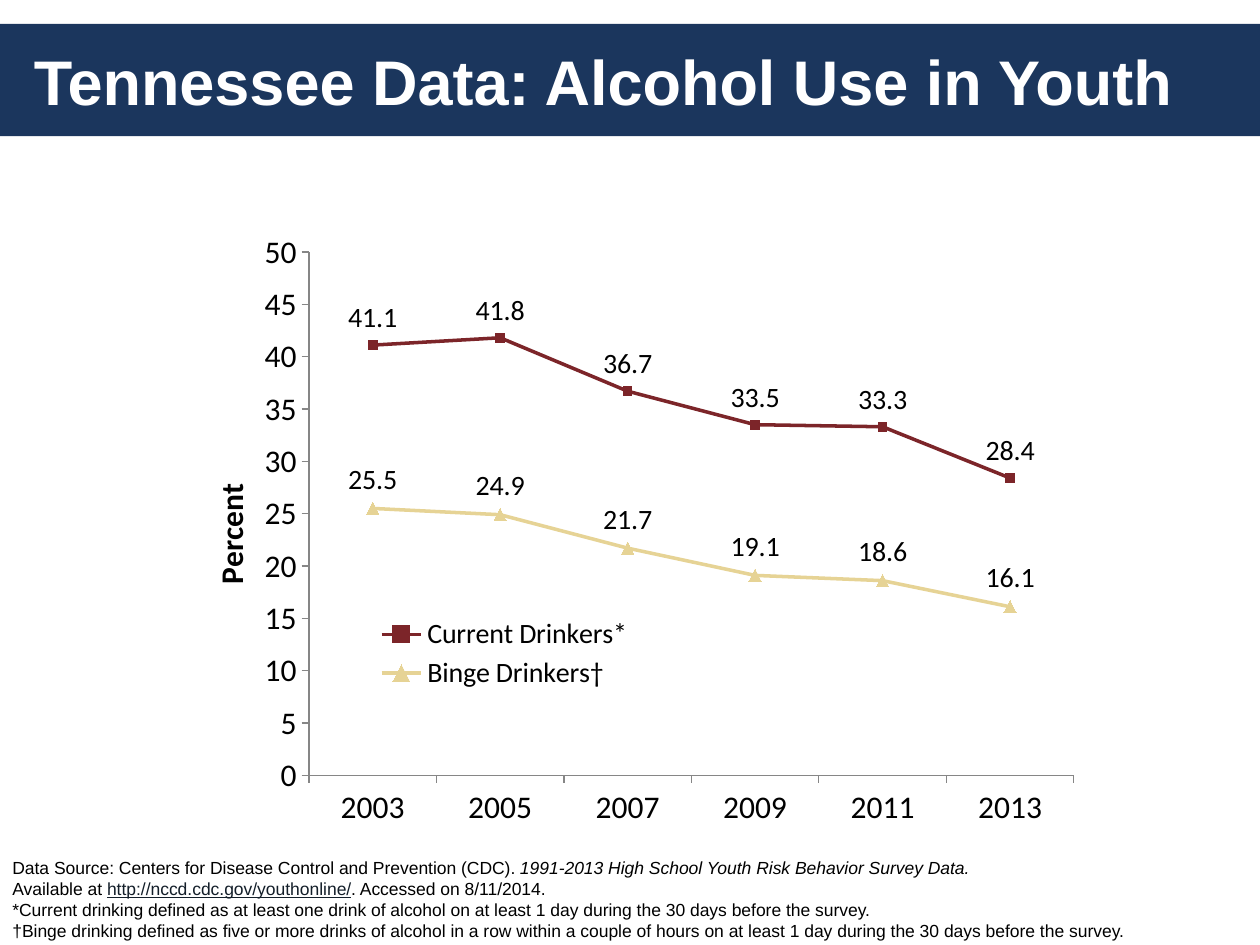
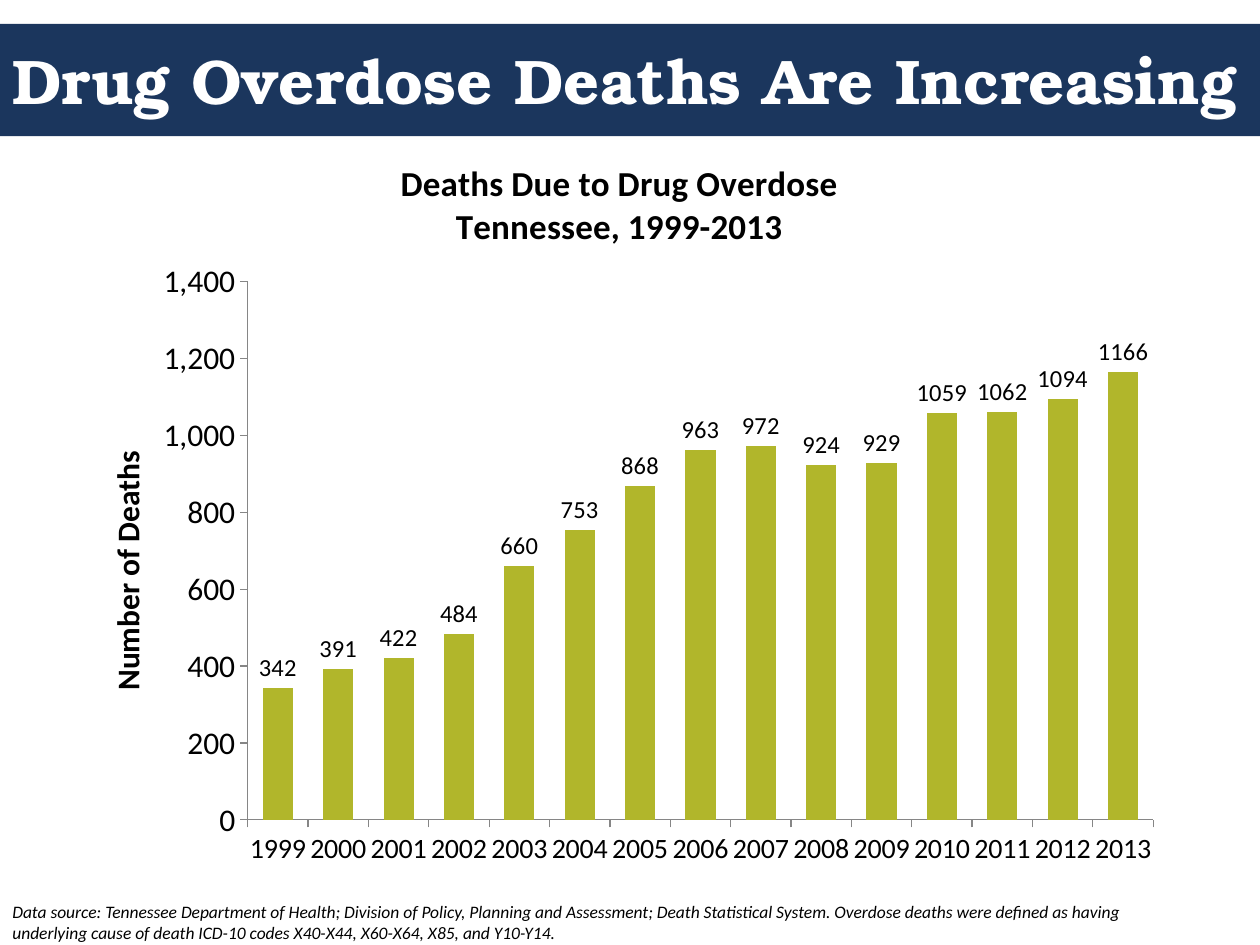
"""Build two slides on alcohol use and drug overdose deaths in Tennessee."""
from dataclasses import dataclass
from typing import Optional

from lxml import etree
from pptx import Presentation
from pptx import util as u
from pptx.chart import axis as ax
from pptx.chart import chart as ch
from pptx.chart import data as cd
from pptx.dml.color import RGBColor
from pptx.enum import chart as ce
from pptx.enum import shapes, text
from pptx.oxml.ns import qn
from pptx.slide import Slide
from pptx.text.text import Font


@dataclass(frozen=True)
class Theme:
    navy: RGBColor = RGBColor(0x1B, 0x36, 0x5D)
    white: RGBColor = RGBColor(0xFF, 0xFF, 0xFF)
    black: RGBColor = RGBColor(0, 0, 0)
    link: RGBColor = RGBColor(0x13, 0x1E, 0x29)
    axis: RGBColor = RGBColor(0x86, 0x86, 0x86)
    maroon: RGBColor = RGBColor(0x7C, 0x25, 0x29)
    sand: RGBColor = RGBColor(0xE6, 0xD3, 0x95)
    olive: RGBColor = RGBColor(0xB1, 0xB6, 0x2B)
    sans: str = "Arial"
    body: str = "Calibri"
    serif: str = "TeX Gyre Bonum"
    title_pt: float = 36
    chart_title_pt: float = 20
    axis_pt: float = 18
    label_pt: float = 16
    small_label_pt: float = 14
    note_pt: float = 10


THEME = Theme()


@dataclass(frozen=True)
class Box:
    left: float
    top: float
    width: float
    height: float

    def inches(self) -> tuple[u.Inches, ...]:
        return tuple(u.Inches(v) for v in (self.left, self.top, self.width, self.height))


@dataclass(frozen=True)
class Piece:
    words: str
    italic: bool = False
    link: bool = False


@dataclass(frozen=True)
class Trend:
    name: str
    values: tuple[float, ...]
    color: RGBColor
    marker: Optional[ce.XL_MARKER_STYLE] = None
    marker_size: int = 5


@dataclass(frozen=True)
class ChartPlan:
    kind: ce.XL_CHART_TYPE
    box: Box
    years: range
    trends: tuple[Trend, ...]
    plot: Box
    axis_title: str
    axis_title_at: tuple[float, float]
    maximum: float
    step: float
    number_format: str
    label_position: ce.XL_LABEL_POSITION
    label_pt: float
    category_pt: float


BAND = Box(0, 0.19, 10, 0.89)

ALCOHOL = ChartPlan(
    ce.XL_CHART_TYPE.LINE_MARKERS, Box(1.32, 1.75, 7.35, 4.9), range(2003, 2014, 2),
    (
        Trend("Current Drinkers*", (41.1, 41.8, 36.7, 33.5, 33.3, 28.4),
              THEME.maroon, ce.XL_MARKER_STYLE.SQUARE),
        Trend("Binge Drinkers†", (25.5, 24.9, 21.7, 19.1, 18.6, 16.1),
              THEME.sand, ce.XL_MARKER_STYLE.TRIANGLE, 7),
    ),
    Box(0.154, 0.051, 0.826, 0.848), "Percent", (0.04, 0.417), 50, 5, "General",
    ce.XL_LABEL_POSITION.ABOVE, THEME.label_pt, THEME.axis_pt,
)

OVERDOSE = ChartPlan(
    ce.XL_CHART_TYPE.COLUMN_CLUSTERED, Box(0.5, 1, 8.83, 6), range(1999, 2014),
    (Trend("Deaths", (342, 391, 422, 484, 660, 753, 868, 963, 972, 924, 929,
                      1059, 1062, 1094, 1166), THEME.olive),),
    Box(0.166, 0.206, 0.814, 0.712), "Number of Deaths", (0.033, 0.422), 1400, 200, "#,##0",
    ce.XL_LABEL_POSITION.OUTSIDE_END, THEME.small_label_pt, THEME.label_pt,
)

ALCOHOL_NOTES = (
    (
        Piece("Data Source: Centers for Disease Control and Prevention (CDC). "),
        Piece("1991-2013 High School Youth Risk Behavior Survey Data.\n", italic=True),
        Piece("Available at "),
        Piece("http://nccd.cdc.gov/youthonline/", link=True),
        Piece(". Accessed on 8/11/2014."),
    ),
    (Piece("*Current drinking defined as at least one drink of alcohol on at least 1 day "
           "during the 30 days before the survey."),),
    (Piece("†Binge drinking defined as five or more drinks of alcohol in a row within a couple "
           "of hours on at least 1 day during the 30 days before the survey."),),
)

OVERDOSE_NOTES = (
    (Piece("Data source: Tennessee Department of Health; Division of Policy, Planning and "
           "Assessment; Death Statistical System. Overdose deaths were defined as having "
           "underlying cause of death ICD-10 codes X40-X44, X60-X64, X85, and Y10-Y14.",
           italic=True),),
)


def style(font: Font, size: float, face: str = THEME.body,
          color: RGBColor = THEME.black, bold: bool = False) -> None:
    font.size, font.name, font.bold = u.Pt(size), face, bold
    font.color.rgb = color


def add_header(slide: Slide, words: str, box: Box, face: str) -> None:
    band = slide.shapes.add_shape(shapes.MSO_SHAPE.RECTANGLE, *BAND.inches())
    band.shadow.inherit = False
    band.fill.solid()
    band.fill.fore_color.rgb = THEME.navy
    band.line.fill.background()
    frame = slide.shapes.add_textbox(*box.inches()).text_frame
    frame.word_wrap = True
    frame.vertical_anchor = text.MSO_ANCHOR.MIDDLE
    frame.text = words
    style(frame.paragraphs[0].runs[0].font, THEME.title_pt, face, THEME.white, True)


def add_notes(slide: Slide, notes: tuple[tuple[Piece, ...], ...], box: Box, face: str) -> None:
    frame = slide.shapes.add_textbox(*box.inches()).text_frame
    frame.word_wrap = True
    for index, pieces in enumerate(notes):
        paragraph = frame.add_paragraph() if index else frame.paragraphs[0]
        for piece in pieces:
            run = paragraph.add_run()
            run.text = piece.words.rstrip("\n")
            style(run.font, THEME.note_pt, face, THEME.link if piece.link else THEME.black)
            run.font.italic, run.font.underline = piece.italic, piece.link
            if piece.words.endswith("\n"):
                paragraph.add_line_break()


def place(chart: ch.Chart, query: str, left: float, top: float,
          width: float = 0, height: float = 0) -> None:
    part = chart.element.xpath(query)[0]
    for old in part.findall(qn("c:layout")):
        part.remove(old)
    layout = etree.Element(qn("c:layout"))
    manual = etree.SubElement(layout, qn("c:manualLayout"))
    inner = part.tag == qn("c:plotArea")
    settings = {"layoutTarget": "inner"} if inner else {}
    settings |= {"xMode": "edge", "yMode": "edge", "x": left, "y": top}
    if width:
        settings |= {"w": width, "h": height}
    for name, value in settings.items():
        etree.SubElement(manual, qn(f"c:{name}")).set("val", str(value))
    overlay = part.find(qn("c:overlay"))
    if inner:
        part.insert(0, layout)
    elif overlay is not None:
        overlay.addprevious(layout)
    else:
        part.append(layout)


def style_axis(axis: ax._BaseAxis, size: float) -> None:
    axis.has_major_gridlines = False
    axis.major_tick_mark = ce.XL_TICK_MARK.OUTSIDE
    axis.minor_tick_mark = ce.XL_TICK_MARK.NONE
    axis.format.line.color.rgb = THEME.axis
    axis.format.line.width = u.Pt(0.75)
    style(axis.tick_labels.font, size)


def style_series(chart: ch.Chart, plan: ChartPlan) -> None:
    for series, trend in zip(chart.plots[0].series, plan.trends):
        if trend.marker is None:
            fills = [series.format.fill]
        else:
            series.smooth = False
            series.format.line.color.rgb = trend.color
            series.format.line.width = u.Pt(2)
            series.marker.style, series.marker.size = trend.marker, trend.marker_size
            series.marker.format.line.color.rgb = trend.color
            fills = [series.marker.format.fill]
        for fill in fills:
            fill.solid()
            fill.fore_color.rgb = trend.color
        labels = series.data_labels
        labels.show_value = True
        labels.position = plan.label_position
        style(labels.font, plan.label_pt)


def add_plan(slide: Slide, plan: ChartPlan) -> ch.Chart:
    data = cd.CategoryChartData()
    data.categories = [str(year) for year in plan.years]
    for trend in plan.trends:
        data.add_series(trend.name, trend.values)
    chart = slide.shapes.add_chart(plan.kind, *plan.box.inches(), data).chart
    style(chart.font, THEME.axis_pt)
    chart.has_title = chart.has_legend = False
    chart.plots[0].vary_by_categories = False
    style_axis(chart.category_axis, plan.category_pt)
    scale = chart.value_axis
    style_axis(scale, THEME.axis_pt)
    scale.minimum_scale, scale.maximum_scale, scale.major_unit = 0, plan.maximum, plan.step
    scale.tick_labels.number_format = plan.number_format
    scale.tick_labels.number_format_is_linked = False
    caption = scale.axis_title.text_frame
    caption.text = plan.axis_title
    style(caption.paragraphs[0].runs[0].font, THEME.axis_pt, bold=True)
    place(chart, ".//c:valAx/c:title", *plan.axis_title_at)
    place(chart, ".//c:plotArea", plan.plot.left, plan.plot.top,
          plan.plot.width, plan.plot.height)
    style_series(chart, plan)
    return chart


def build_alcohol(slide: Slide) -> None:
    add_header(slide, "Tennessee Data: Alcohol Use in Youth",
               Box(0.17, 0.19, 9.67, 0.9), THEME.sans)
    chart = add_plan(slide, ALCOHOL)
    chart.has_legend = True
    chart.legend.position = ce.XL_LEGEND_POSITION.RIGHT
    chart.legend.include_in_layout = True
    style(chart.legend.font, THEME.label_pt)
    place(chart, ".//c:legend", 0.22, 0.635, 0.29, 0.134)
    add_notes(slide, ALCOHOL_NOTES, Box(0, 6.75, 10, 0.75), THEME.sans)


def build_overdose(slide: Slide) -> None:
    add_header(slide, "Drug Overdose Deaths Are Increasing",
               Box(0, 0.17, 10, 0.92), THEME.serif)
    add_notes(slide, OVERDOSE_NOTES, Box(0, 7.1, 9.17, 0.44), THEME.body)
    chart = add_plan(slide, OVERDOSE)
    chart.plots[0].gap_width = 100
    heading = chart.chart_title.text_frame
    heading.text = "Deaths Due to Drug Overdose\nTennessee, 1999-2013"
    for paragraph in heading.paragraphs:
        style(paragraph.runs[0].font, THEME.chart_title_pt, bold=True)
    place(chart, "./c:chart/c:title", 0.3, 0.04)


def main() -> None:
    deck = Presentation()
    deck.slide_width, deck.slide_height = u.Inches(10), u.Inches(7.5)
    for build in (build_alcohol, build_overdose):
        build(deck.slides.add_slide(deck.slide_layouts[6]))
    deck.save("out.pptx")


if __name__ == "__main__":
    main()
